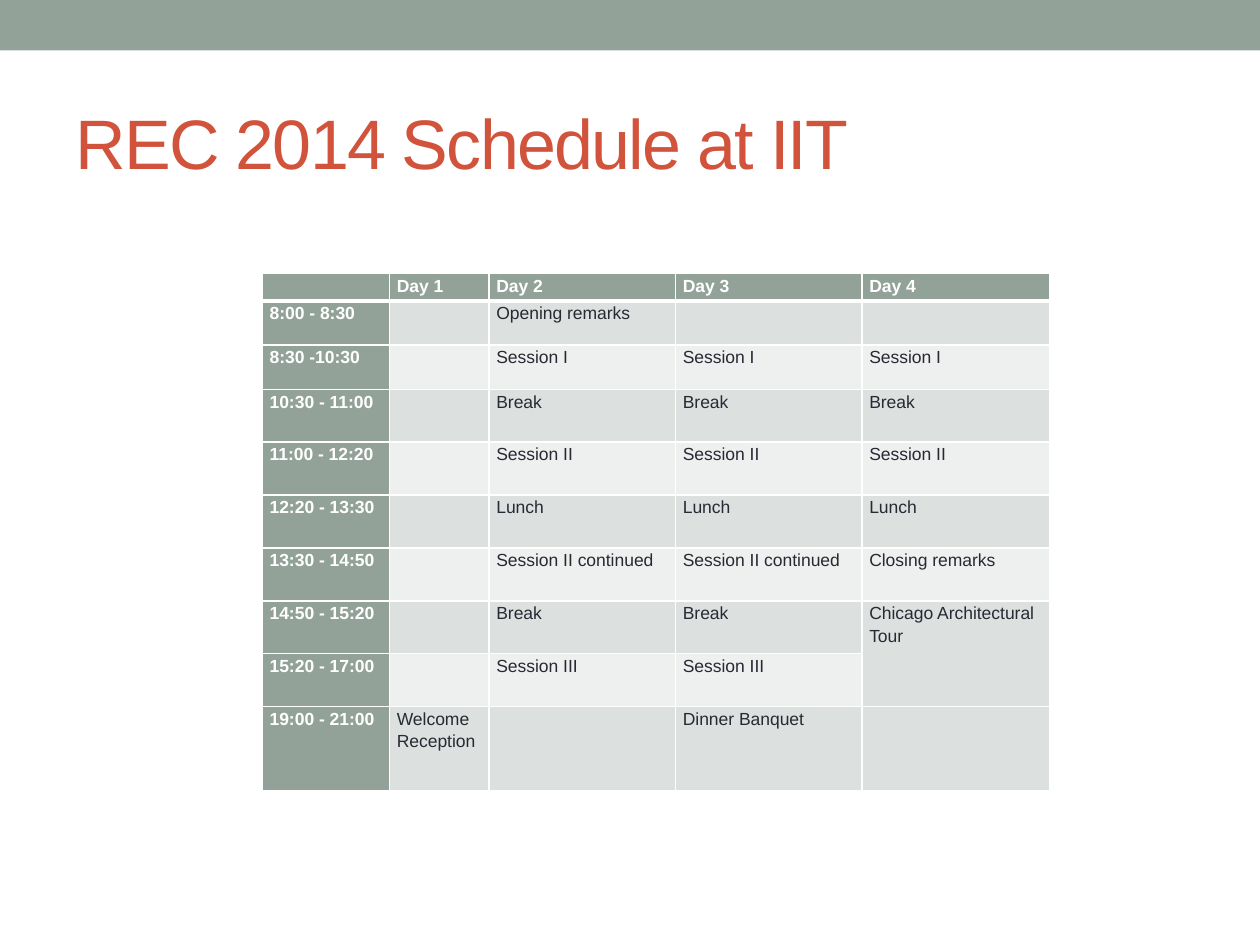
from dataclasses import dataclass

from lxml import etree
from pptx import Presentation
from pptx.dml.color import RGBColor
from pptx.enum.shapes import MSO_SHAPE
from pptx.enum.text import MSO_ANCHOR, PP_ALIGN
from pptx.oxml.ns import qn
from pptx.util import Inches, Pt

RECTANGLE = MSO_SHAPE.RECTANGLE
MIDDLE = MSO_ANCHOR.MIDDLE
LEFT = PP_ALIGN.LEFT

COL_WIDTHS = [1.01, 0.79, 1.48, 1.48, 1.49]
ROW_HEIGHTS = [0.22] + [0.35] * 2 + [0.42] * 6 + [0.67]
SCHEDULE = [
    ["", "Day 1", "Day 2", "Day 3", "Day 4"],
    ["8:00 - 8:30", "", "Opening remarks", "", ""],
    ["8:30 -10:30", "", "Session I", "Session I", "Session I"],
    ["10:30 - 11:00", "", "Break", "Break", "Break"],
    ["11:00 - 12:20", "", "Session II", "Session II", "Session II"],
    ["12:20 - 13:30", "", "Lunch", "Lunch", "Lunch"],
    ["13:30 - 14:50", "", "Session II continued", "Session II continued", "Closing remarks"],
    ["14:50 - 15:20", "", "Break", "Break", "Chicago Architectural Tour"],
    ["15:20 - 17:00", "", "Session III", "Session III", ""],
    ["19:00 - 21:00", "Welcome Reception", "", "Dinner Banquet", ""],
]
TOUR_START, TOUR_END = (7, 4), (8, 4)


@dataclass(frozen=True)
class Theme:
    """Colours, font and type sizes of the slide."""
    font: str = "Arial"
    title_size: int = 40
    cell_size: int = 10
    line_spacing: float = 1.15
    accent: str = "93A299"
    title: str = "D2533C"
    text: str = "292934"
    white: str = "FFFFFF"
    bands: tuple = ("EEF0EF", "DCE0DE")


class SlideBuilder:
    """Draw styled elements on the current slide."""

    def __init__(self, slide, theme):
        self.slide = slide
        self.theme = theme

    def set_font(self, font, size, color, bold=False):
        """Apply one type style to a font."""
        values = {"name": self.theme.font, "size": Pt(size), "bold": bold}
        for name, value in values.items():
            setattr(font, name, value)
        font.color.rgb = RGBColor.from_string(color)

    def bar(self, x, y, w, h):
        """Add a plain accent rectangle."""
        sp = self.slide.shapes.add_shape(RECTANGLE, Inches(x), Inches(y), Inches(w), Inches(h))
        sp.shadow.inherit = False
        sp.fill.solid()
        sp.fill.fore_color.rgb = RGBColor.from_string(self.theme.accent)
        sp.line.fill.background()

    def title(self, text, x, y, w, h):
        """Place and format the title placeholder."""
        sp = self.slide.shapes.title
        box = {"left": x, "top": y, "width": w, "height": h}
        for name, value in box.items():
            setattr(sp, name, Inches(value))
        tf = sp.text_frame
        tf.vertical_anchor = MIDDLE
        p = tf.paragraphs[0]
        p.alignment = LEFT
        r = p.add_run()
        r.text = text
        self.set_font(r.font, self.theme.title_size, self.theme.title)
        r.font._element.set("spc", "-100")

    def borders(self, cell, bottom):
        """Draw white lines on the four sides of a cell."""
        tc_pr = cell._tc.get_or_add_tcPr()
        for side, width in {"lnL": 1, "lnR": 1, "lnT": 1, "lnB": bottom}.items():
            ln = etree.SubElement(tc_pr, qn(f"a:{side}"), w=str(Pt(width)))
            fill = etree.SubElement(ln, qn("a:solidFill"))
            etree.SubElement(fill, qn("a:srgbClr"), val=self.theme.white)

    def cell(self, cell, text, fill, color, bold, bottom):
        """Fill, border and write one table cell."""
        margins = {"margin_left": 0.06, "margin_right": 0.06, "margin_top": 0, "margin_bottom": 0}
        for name, value in margins.items():
            setattr(cell, name, Inches(value))
        self.borders(cell, bottom)
        cell.fill.solid()
        cell.fill.fore_color.rgb = RGBColor.from_string(fill)
        p = cell.text_frame.paragraphs[0]
        p.line_spacing = self.theme.line_spacing
        if text:
            r = p.add_run()
            r.text = text
            self.set_font(r.font, self.theme.cell_size, color, bold)
        else:
            etree.SubElement(p._p, qn("a:endParaRPr"), sz=str(self.theme.cell_size * 100))

    def table(self, rows, x, y, widths, heights):
        """Add a banded table with a header row and header column."""
        t = self.theme
        frame = self.slide.shapes.add_table(
            len(rows), len(widths), Inches(x), Inches(y), Inches(sum(widths)), Inches(sum(heights)))
        table = frame.table
        table.first_col = True
        for col, width in zip(table.columns, widths):
            col.width = Inches(width)
        for i, (row, height) in enumerate(zip(rows, heights)):
            table.rows[i].height = Inches(height)
            for j, text in enumerate(row):
                head = i == 0 or j == 0
                self.cell(table.cell(i, j), text,
                          fill=t.accent if head else t.bands[i % 2],
                          color=t.white if head else t.text,
                          bold=head, bottom=3 if i == 0 else 1)
        return table


def main():
    """Build the schedule slide."""
    prs = Presentation()
    prs.slide_width, prs.slide_height = Inches(10), Inches(7.5)
    s = SlideBuilder(prs.slides.add_slide(prs.slide_layouts[5]), Theme())
    s.bar(0, 0, 10, 0.4)
    s.title("REC 2014 Schedule at IIT", 0.5, 0.58, 9, 1.08)
    table = s.table(SCHEDULE, 2.08, 2.17, COL_WIDTHS, ROW_HEIGHTS)
    table.cell(*TOUR_START).merge(table.cell(*TOUR_END))
    prs.save("out.pptx")


if __name__ == "__main__":
    main()
